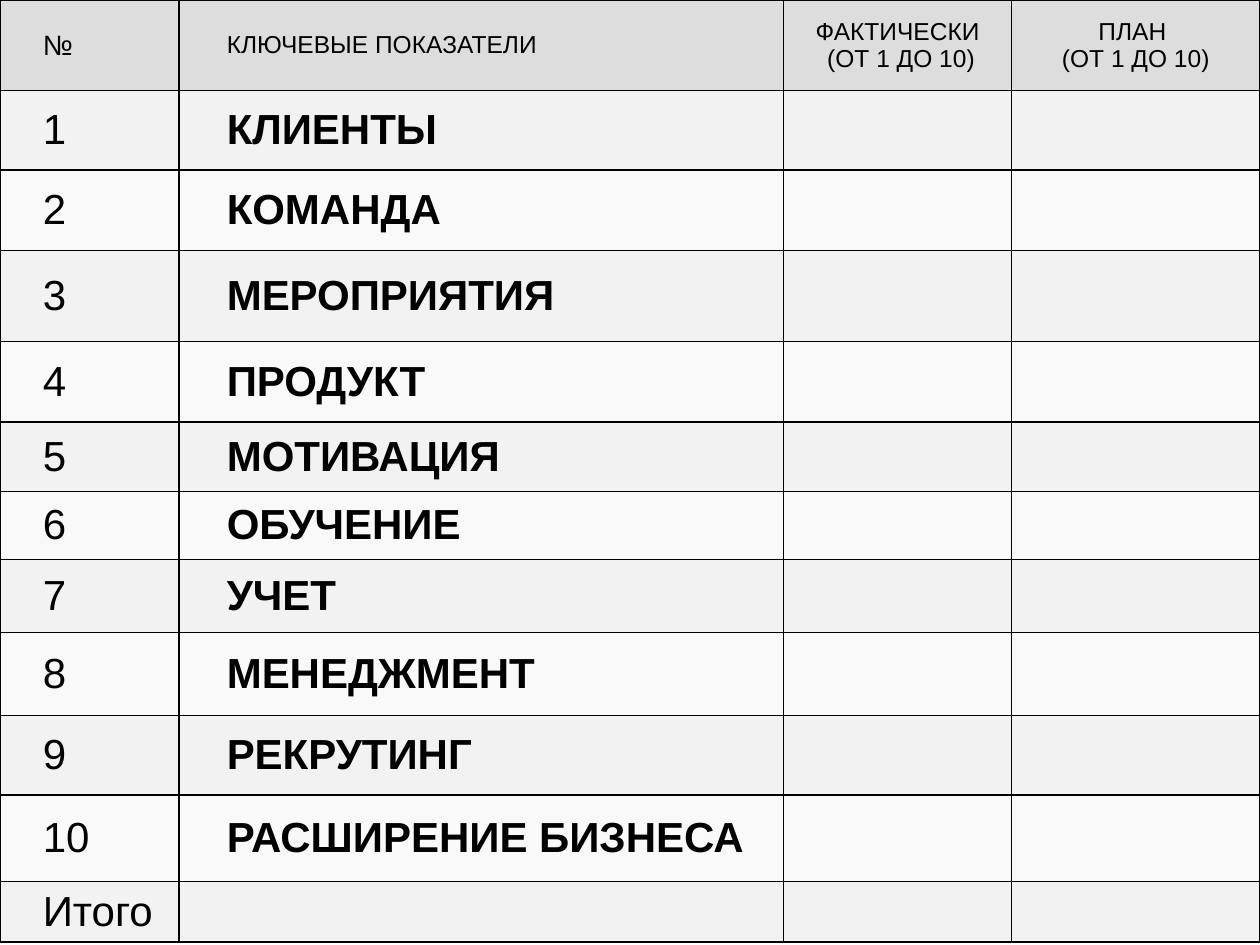
from lxml.etree import SubElement
from pptx import Presentation
from pptx.dml.color import RGBColor
from pptx.enum.text import MSO_ANCHOR as Anchor, PP_ALIGN as Align
from pptx.oxml.ns import qn
from pptx.util import Inches, Pt

SLIDE_WIDTH, SLIDE_HEIGHT = 10, 7.5
FONT, INK = "Arial", "000000"
HEADER_FILL, BAND_FILLS = "DDDDDD", ("F2F2F2", "F9F9F9")

COLUMN_WEIGHTS = [1.42, 4.8, 1.81, 1.97]
ROW_WEIGHTS = [0.72, 0.63, 0.64, 0.72, 0.64, 0.55, 0.54, 0.58, 0.66, 0.63, 0.69, 0.48]
TEXT_INSETS = [0.34, 0.38, 0.1, 0.1]

HEADERS = ["№", "КЛЮЧЕВЫЕ ПОКАЗАТЕЛИ", "ФАКТИЧЕСКИ\n (ОТ 1 ДО 10)", "ПЛАН \n(ОТ 1 ДО 10)"]
INDICATORS = ["КЛИЕНТЫ", "КОМАНДА", "МЕРОПРИЯТИЯ", "ПРОДУКТ", "МОТИВАЦИЯ", "ОБУЧЕНИЕ",
              "УЧЕТ", "МЕНЕДЖМЕНТ", "РЕКРУТИНГ", "РАСШИРЕНИЕ БИЗНЕСА"]
TOTAL = "Итого"


def color(value):
    return RGBColor.from_string(value)


def set_sizes(lines, attribute, weights, length):
    """Share a length among columns or rows by weight."""
    for line, weight in zip(lines, weights):
        setattr(line, attribute, Inches(length * weight / sum(weights)))


def add_borders(cell, width=1):
    properties = cell._tc.get_or_add_tcPr()
    for index, side in enumerate(("a:lnL", "a:lnR", "a:lnT", "a:lnB")):
        line = properties.makeelement(qn(side), {"w": str(Pt(width))})
        fill = SubElement(line, qn("a:solidFill"))
        SubElement(fill, qn("a:srgbClr"), val=INK)
        properties.insert(index, line)  # borders come before the fill


def style_cell(cell, text, fill, inset, size, bold=False, align=Align.LEFT):
    cell.fill.solid()
    cell.fill.fore_color.rgb = color(fill)
    add_borders(cell)
    cell.vertical_anchor = Anchor.MIDDLE
    cell.margin_left = Inches(inset)
    if not text:
        return
    cell.text_frame.text = text
    for para in cell.text_frame.paragraphs:
        para.alignment = align
        for span in para.runs:
            span.font.name = FONT
            span.font.size = Pt(size)
            span.font.bold = bold
            span.font.color.rgb = color(INK)


def add_scorecard(page, left, top, width, height):
    records = [[str(number), name, "", ""] for number, name in enumerate(INDICATORS, 1)]
    records.append([TOTAL, "", "", ""])
    frame = page.shapes.add_table(len(records) + 1, len(HEADERS), Inches(left),
                                  Inches(top), Inches(width), Inches(height))
    table = frame.table
    set_sizes(table.columns, "width", COLUMN_WEIGHTS, width)
    set_sizes(table.rows, "height", ROW_WEIGHTS, height)

    # Header row
    for column, text in enumerate(HEADERS):
        style_cell(table.cell(0, column), text, HEADER_FILL, TEXT_INSETS[column],
                   size=16 if column == 0 else 14,
                   align=Align.CENTER if column > 1 else Align.LEFT)

    # Banded indicator rows and the total
    for row, record in enumerate(records):
        for column, text in enumerate(record):
            style_cell(table.cell(row + 1, column), text, BAND_FILLS[row % 2],
                       TEXT_INSETS[column], size=24, bold=column == 1)


def main():
    deck = Presentation()
    deck.slide_width, deck.slide_height = Inches(SLIDE_WIDTH), Inches(SLIDE_HEIGHT)
    page = deck.slides.add_slide(deck.slide_layouts[6])
    add_scorecard(page, 0, 0, SLIDE_WIDTH, sum(ROW_WEIGHTS))
    deck.save("out.pptx")


if __name__ == "__main__":
    main()
